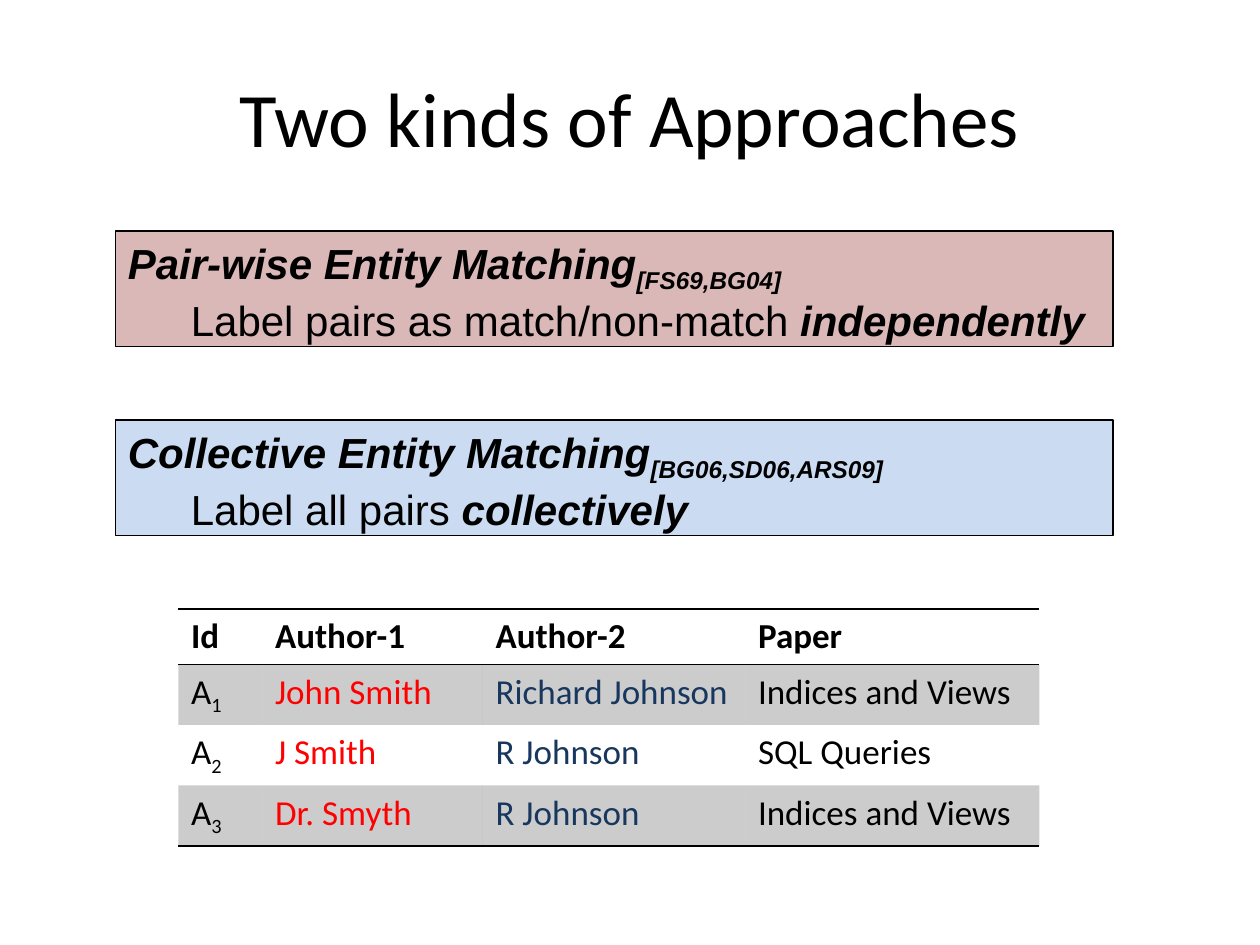
from dataclasses import dataclass
from typing import Any, NamedTuple

from lxml import etree
from pptx import Presentation
from pptx.dml.color import RGBColor
from pptx.enum.shapes import MSO_SHAPE
from pptx.enum.text import MSO_ANCHOR, PP_ALIGN
from pptx.oxml.ns import qn
from pptx.util import Emu, Inches, Pt

RECT = MSO_SHAPE.RECTANGLE
TOP, MIDDLE = MSO_ANCHOR.TOP, MSO_ANCHOR.MIDDLE
LEFT, CENTER = PP_ALIGN.LEFT, PP_ALIGN.CENTER
PLAIN = "{2D5ABB26-0587-4C30-8999-92F81FD0307C}"  # table style without grid


@dataclass(frozen=True)
class Theme:
    ink: str = "000000"
    red: str = "FF0000"
    navy: str = "17375E"
    rose: str = "800000"
    sky: str = "558ED5"
    head: str = "Calibri"
    body: str = "Arial"
    title: int = 44
    text: int = 24
    cell: int = 20
    rule: float = 1
    edge: float = 0.75


class Span(NamedTuple):
    text: str
    bold: bool = False
    slant: bool = False
    sub: bool = False


class Panel(NamedTuple):
    row: float
    fill: str
    alpha: int
    name: str
    cites: str
    lead: str
    key: str


THEME = Theme()
UNIT = Inches(1) // 12  # the slide is a grid of 120 columns by 90 rows
PANELS = [
    Panel(22, THEME.rose, 28, "Pair-wise Entity Matching", "[FS69,BG04]",
          "Label pairs as match/non-match ", "independently"),
    Panel(40, THEME.sky, 30, "Collective Entity Matching", "[BG06,SD06,ARS09]",
          "Label all pairs ", "collectively"),
]
HEADS = ["Id", "Author-1", "Author-2", "Paper"]
PAPERS = [
    ("John Smith", "Richard Johnson", "Indices and Views"),
    ("J Smith", "R Johnson", "SQL Queries"),
    ("Dr. Smyth", "R Johnson", "Indices and Views"),
]
COLS = [8, 21, 25, 28]
INKS = [THEME.ink, THEME.red, THEME.navy, THEME.ink]
HEAD_ROW, BODY_ROW = 5.2, 5.76


def grid(*cells: float) -> list[Emu]:
    return [Emu(round(n * UNIT)) for n in cells]


def style(target: Any, **values: Any) -> None:
    for name, value in values.items():
        setattr(target, name, value)


def write(para: Any, spans: list[Span], font: str, size: int, ink: str) -> None:
    for span in spans:
        run = para.add_run()
        run.text = span.text
        style(run.font, name=font, size=Pt(size), bold=span.bold, italic=span.slant)
        run.font.color.rgb = RGBColor.from_string(ink)
        if span.sub:
            run._r.get_or_add_rPr().set("baseline", "-25000")


def tint(fill: Any, props: Any, ink: str, alpha: int) -> None:
    """Fill with a colour that is alpha percent opaque."""
    fill.solid()
    fill.fore_color.rgb = RGBColor.from_string(ink)
    color = props.find(qn("a:solidFill"))[0]
    etree.SubElement(color, qn("a:alpha"), val=str(alpha * 1000))


def border(cell: Any, ruled: set[str]) -> None:
    """Rule the named sides and clear the others."""
    props = cell._tc.get_or_add_tcPr()
    for spot, side in enumerate(("lnL", "lnR", "lnT", "lnB")):
        line = etree.Element(qn(f"a:{side}"), w=str(Pt(THEME.rule)))
        if side in ruled:
            fill = etree.SubElement(line, qn("a:solidFill"))
            etree.SubElement(fill, qn("a:srgbClr"), val=THEME.ink)
        else:
            etree.SubElement(line, qn("a:noFill"))
        props.insert(spot, line)


def add_title(slide: Any, text: str) -> None:
    title = slide.shapes.title
    left, top, width, height = grid(6, 3.6, 108, 15)
    style(title, left=left, top=top, width=width, height=height)
    title.text_frame.vertical_anchor = MIDDLE
    para = title.text_frame.paragraphs[0]
    para.alignment = CENTER
    write(para, [Span(text)], THEME.head, THEME.title, THEME.ink)


def add_panel(slide: Any, panel: Panel) -> None:
    box = slide.shapes.add_shape(RECT, *grid(11, panel.row, 95, 11))
    box.shadow.inherit = False
    tint(box.fill, box._element.spPr, panel.fill, panel.alpha)
    box.line.color.rgb = RGBColor.from_string(THEME.ink)
    box.line.width = Pt(THEME.edge)
    frame = box.text_frame
    style(frame, word_wrap=True, vertical_anchor=TOP)
    first, second = frame.paragraphs[0], frame.add_paragraph()
    style(first, alignment=LEFT, space_before=Pt(THEME.text * 0.2))
    style(second, alignment=LEFT, space_before=Pt(0), level=1)
    props = second._p.get_or_add_pPr()
    props.set("marL", str(UNIT * 6))
    props.set("indent", "0")
    look = (THEME.body, THEME.text, THEME.ink)
    write(first, [Span(panel.name, True, True),
                  Span(panel.cites, True, True, True)], *look)
    write(second, [Span(panel.lead), Span(panel.key, True, True)], *look)


def add_papers(slide: Any) -> None:
    rows = [[[Span(head, bold=True)] for head in HEADS]]
    for num, paper in enumerate(PAPERS, 1):
        mark = [Span("A"), Span(str(num), sub=True)]
        rows.append([mark] + [[Span(text)] for text in paper])
    highs = [HEAD_ROW] + [BODY_ROW] * len(PAPERS)
    rules = {0: {"lnT", "lnB"}, 1: {"lnT"}, len(PAPERS): {"lnB"}}
    place = grid(17, 58, sum(COLS), sum(highs))
    table = slide.shapes.add_table(len(rows), len(COLS), *place).table
    table._tbl.tblPr.find(qn("a:tableStyleId")).text = PLAIN
    for col, width in zip(table.columns, grid(*COLS)):
        col.width = width
    for row, height in zip(table.rows, grid(*highs)):
        row.height = height
    for r, line in enumerate(rows):
        for c, spans in enumerate(line):
            cell = table.cell(r, c)
            ink = INKS[c] if r else THEME.ink
            write(cell.text_frame.paragraphs[0], spans, THEME.head, THEME.cell, ink)
            if r % 2:
                tint(cell.fill, cell._tc.get_or_add_tcPr(), THEME.ink, 20)
            else:
                cell.fill.background()
            border(cell, rules.get(r, set()))


def main() -> None:
    deck = Presentation()
    style(deck, slide_width=UNIT * 120, slide_height=UNIT * 90)
    slide = deck.slides.add_slide(deck.slide_layouts[5])
    add_title(slide, "Two kinds of Approaches")
    for panel in PANELS:
        add_panel(slide, panel)
    add_papers(slide)
    deck.save("out.pptx")


if __name__ == "__main__":
    main()
